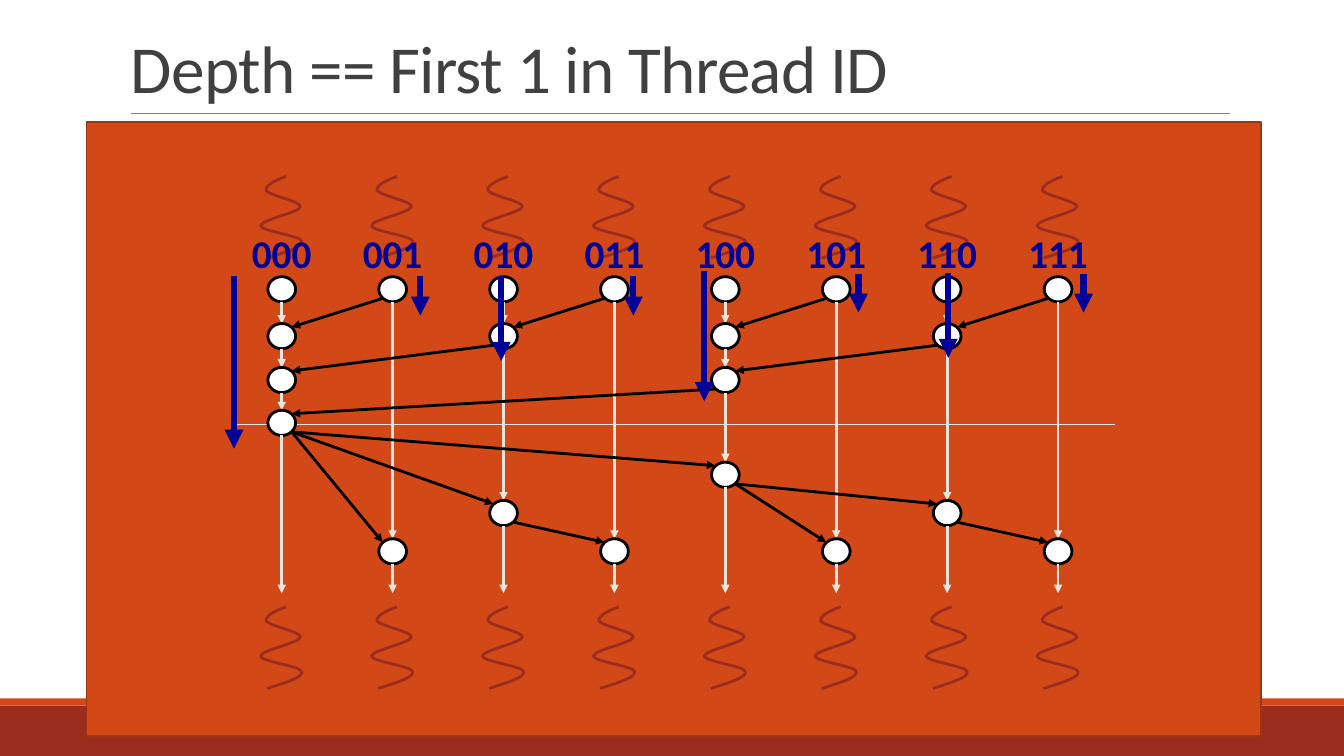
"""Build the slide on thread depth in a reduction and broadcast tree."""

from typing import NamedTuple

from lxml.etree import SubElement
from pptx import Presentation
from pptx.dml.color import RGBColor
from pptx.enum.shapes import MSO_CONNECTOR as Link, MSO_SHAPE as Preset
from pptx.enum.text import MSO_ANCHOR as Anchor, MSO_AUTO_SIZE as AutoSize, PP_ALIGN as Align
from pptx.oxml.ns import qn
from pptx.shapes.shapetree import SlideShapes as Shapes
from pptx.util import Emu, Inches, Pt

BLACK = RGBColor(0x00, 0x00, 0x00)
WHITE = RGBColor(0xFF, 0xFF, 0xFF)
GREY = RGBColor(0x80, 0x80, 0x80)
CHARCOAL = RGBColor(0x40, 0x40, 0x40)
NAVY = RGBColor(0x00, 0x00, 0x99)
CREAM = RGBColor(0xE9, 0xE5, 0xDC)
ORANGE = RGBColor(0xD3, 0x48, 0x17)
RUST = RGBColor(0x9C, 0x35, 0x11)
BRICK = RGBColor(0x9B, 0x2D, 0x1F)

FONT = "Calibri"
COLUMN, ROW = Inches(1.1), Inches(0.5)
SLIDE_COLUMNS, SLIDE_ROWS = 12.12, 15
THREADS, FIRST_THREAD = 8, 2.54
REDUCE_ROWS = (5.74, 6.67, 7.54, 8.39)
BROADCAST_ROWS = {4: 9.42, 2: 10.18, 1: 10.94}
STEM_END = 11.77
NODE_WIDTH, NODE_HEIGHT = 0.25, 0.5
RIM_X, RIM_Y = 0.09, 0.18
SQUIGGLE_TOPS = (3.5, 12.04)
SQUIGGLE = (
    (-0.13, 1.62),
    (0.04, 1.5), (0.2, 1.4), (0.18, 1.28),
    (0.17, 1.18), (-0.19, 1.08), (-0.19, 0.98),
    (-0.19, 0.86), (0.16, 0.72), (0.17, 0.6),
    (0.18, 0.5), (-0.11, 0.38), (-0.14, 0.28),
    (-0.15, 0.18), (-0.06, 0.08), (0.04, 0),
)

Point = tuple[float, float]


class Block(NamedTuple):
    """A filled rectangle in grid units."""

    left: float
    top: float
    width: float
    height: float
    fill: RGBColor
    outline: RGBColor | None = None


class Stroke(NamedTuple):
    """Colour, width in points and arrowhead of a line."""

    colour: RGBColor
    width: float
    arrow: bool = True


class DepthArrow(NamedTuple):
    """An arrow beside a thread, spanning its active rows."""

    shift: float
    top: float
    bottom: float


BLOCKS = (
    Block(0, 14, SLIDE_COLUMNS, 1, BRICK),
    Block(0, 13.86, SLIDE_COLUMNS, 0.14, ORANGE),
    Block(0.78, 2.42, 10.59, 12.18, ORANGE, RUST),
)
TITLE_RULE = Stroke(GREY, 0.5, arrow=False)
PHASE_RULE = Stroke(CREAM, 1, arrow=False)
MESSAGE, STEM, DEPTH = Stroke(BLACK, 2), Stroke(CREAM, 2), Stroke(NAVY, 4.5)
DEPTH_ARROWS = (
    DepthArrow(-0.43, 5.48, 8.9), DepthArrow(0.25, 5.48, 6.26),
    DepthArrow(-0.02, 5.48, 7.16), DepthArrow(0.17, 5.48, 6.26),
    DepthArrow(-0.19, 5.38, 7.96), DepthArrow(0.2, 5.44, 6.2),
    DepthArrow(0.01, 5.42, 7.1), DepthArrow(0.23, 5.44, 6.2),
)


def across(columns: float) -> Emu:
    """Turn grid columns into a length."""
    return Emu(round(columns * COLUMN))


def down(rows: float) -> Emu:
    """Turn grid rows into a length."""
    return Emu(round(rows * ROW))


def reduce_level(thread: int) -> int:
    """Return the last reduction level that a thread takes part in."""
    return ((thread & -thread) or THREADS).bit_length() - 1


def node_rows(thread: int) -> list[float]:
    """Return the rows of all nodes of a thread, from top to bottom."""
    rows = list(REDUCE_ROWS[:reduce_level(thread) + 1])
    return rows + [BROADCAST_ROWS[thread & -thread]] if thread else rows


def draw_block(shapes: Shapes, block: Block, preset: Preset = Preset.RECTANGLE,
               outline_width: float = 1.25) -> None:
    """Draw a filled preset shape."""
    area = shapes.add_shape(preset, across(block.left), down(block.top),
                            across(block.width), down(block.height))
    area.shadow.inherit = False
    area.fill.solid()
    area.fill.fore_color.rgb = block.fill
    if block.outline is None:
        area.line.fill.background()
    else:
        area.line.color.rgb = block.outline
        area.line.width = Pt(outline_width)


def draw_line(shapes: Shapes, start: Point, end: Point, stroke: Stroke) -> None:
    """Draw a straight line, with an arrowhead if the stroke has one."""
    link = shapes.add_connector(Link.STRAIGHT, across(start[0]), down(start[1]),
                                across(end[0]), down(end[1]))
    link.line.color.rgb = stroke.colour
    link.line.width = Pt(stroke.width)
    properties = link._element.spPr
    if stroke.arrow:
        SubElement(properties.find(qn("a:ln")), qn("a:tailEnd"), type="triangle")
    SubElement(properties, qn("a:effectLst"))


def draw_squiggle(shapes: Shapes, column: float, top: float) -> None:
    """Draw the wavy sign of a running thread as five cubic curves."""
    points = [(across(column + x), down(top + y)) for x, y in SQUIGGLE]
    builder = shapes.build_freeform(*points[0])
    builder.add_line_segments(points[1:], close=False)
    squiggle = builder.convert_to_shape()
    outline = next(squiggle._element.iter(qn("a:path")))
    for index, segment in enumerate(outline.findall(qn("a:lnTo"))):
        if index % 3 == 0:
            curve = SubElement(outline, qn("a:cubicBezTo"))
        curve.append(segment[0])
        outline.remove(segment)
    squiggle.shadow.inherit = False
    squiggle.fill.background()
    squiggle.line.color.rgb = BRICK
    squiggle.line.width = Pt(2)


def draw_messages(shapes: Shapes, thread: int) -> None:
    """Draw the arrows between a thread and its parent."""
    level, parent = reduce_level(thread), thread & (thread - 1)
    near, far = FIRST_THREAD + thread - RIM_X, FIRST_THREAD + parent + RIM_X
    draw_line(shapes, (near, REDUCE_ROWS[level] + RIM_Y),
              (far, REDUCE_ROWS[level + 1] - RIM_Y), MESSAGE)
    draw_line(shapes, (far, node_rows(parent)[-1] + RIM_Y),
              (near, node_rows(thread)[-1] - RIM_Y), MESSAGE)


def draw_thread(shapes: Shapes, thread: int) -> None:
    """Draw the squiggles, nodes and stems of a thread."""
    column, rows = FIRST_THREAD + thread, node_rows(thread)
    for top in SQUIGGLE_TOPS:
        draw_squiggle(shapes, column, top)
    ends = [row - NODE_HEIGHT / 2 for row in rows[1:]] + [STEM_END]
    for row, end in zip(rows, ends):
        node = Block(column - NODE_WIDTH / 2, row - NODE_HEIGHT / 2,
                     NODE_WIDTH, NODE_HEIGHT, WHITE, BLACK)
        draw_block(shapes, node, Preset.OVAL, 2)
        draw_line(shapes, (column, row + NODE_HEIGHT / 2), (column, end), STEM)


def draw_label(shapes: Shapes, thread: int) -> None:
    """Write the binary ID of a thread."""
    label = shapes.add_textbox(across(FIRST_THREAD + thread - 0.36), down(4.46),
                               across(0.72), down(1.14))
    label.text_frame.word_wrap = False
    label.text_frame.auto_size = AutoSize.SHAPE_TO_FIT_TEXT
    paragraph = label.text_frame.paragraphs[0]
    paragraph.alignment = Align.CENTER
    run = paragraph.add_run()
    run.text = f"{thread:03b}"
    run.font.name, run.font.size, run.font.bold = FONT, Pt(28), True
    run.font.color.rgb = NAVY


def write_title(shapes: Shapes) -> None:
    """Place and write the title."""
    title = shapes.title
    title.left, title.top, title.width, title.height = across(1.09), down(0.62), across(10), down(1.6)
    title.text_frame.vertical_anchor = Anchor.BOTTOM
    title.text_frame.auto_size = AutoSize.NONE
    paragraph = title.text_frame.paragraphs[0]
    paragraph.alignment, paragraph.line_spacing = Align.LEFT, 0.85
    run = paragraph.add_run()
    run.text = "Depth == First 1 in Thread ID"
    run.font.name, run.font.size = FONT, Pt(48)
    run.font.color.rgb = CHARCOAL
    run.font._element.set("spc", "-50")


deck = Presentation()
deck.slide_width, deck.slide_height = Inches(13.33), down(SLIDE_ROWS)
canvas = deck.slides.add_slide(deck.slide_layouts[5]).shapes
write_title(canvas)
for panel in BLOCKS:
    draw_block(canvas, panel)
draw_line(canvas, (1.18, 2.24), (11.09, 2.24), TITLE_RULE)
draw_line(canvas, (2.08, 8.42), (10.05, 8.42), PHASE_RULE)
for number in range(THREADS):
    draw_thread(canvas, number)
for number in range(1, THREADS):
    draw_messages(canvas, number)
for number, (shift, first, last) in enumerate(DEPTH_ARROWS):
    draw_label(canvas, number)
    draw_line(canvas, (FIRST_THREAD + number + shift, first),
              (FIRST_THREAD + number + shift, last), DEPTH)
deck.save("out.pptx")
